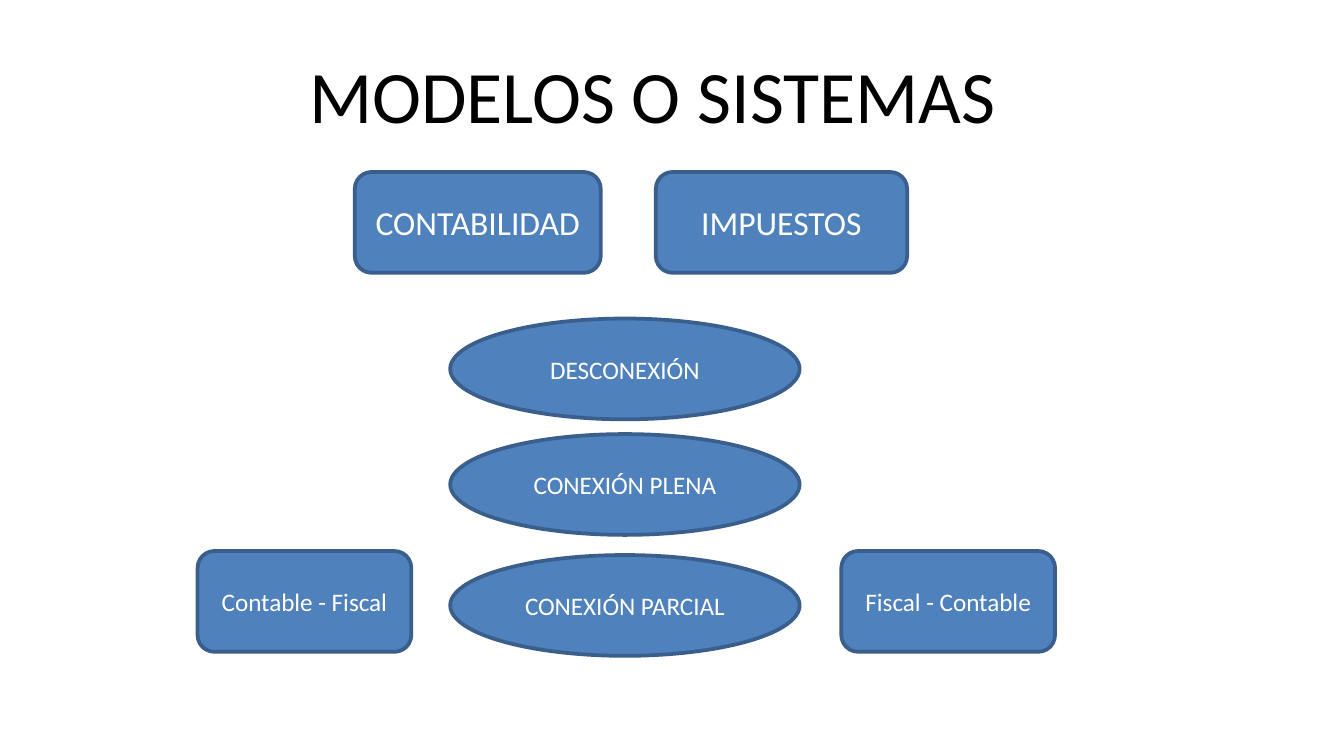
from pptx import Presentation
from pptx.dml.color import RGBColor
from pptx.enum import shapes, text
from pptx.util import Inches, Pt

COLORS = {"title": "000000", "fill": "4F81BD", "line": "3A5F8C", "label": "FFFFFF"}
FONT = "Calibri"
BOX = shapes.MSO_SHAPE.ROUNDED_RECTANGLE
OVAL = shapes.MSO_SHAPE.OVAL
NODE_HEIGHT = 0.75


def color(name):
    return RGBColor.from_string(COLORS[name])


def set_text(sp, label, size, color_name):
    tf = sp.text_frame
    tf.text = label
    tf.word_wrap = True
    tf.vertical_anchor = text.MSO_ANCHOR.MIDDLE
    p = tf.paragraphs[0]
    p.alignment = text.PP_ALIGN.CENTER
    font = p.runs[0].font
    font.name, font.size = FONT, Pt(size)
    font.color.rgb = color(color_name)


def add_title(s, label):
    sp = s.shapes.title
    sp.left, sp.top = Inches(1.64), Inches(0.3)
    sp.width, sp.height = Inches(6.43), Inches(0.8)
    set_text(sp, label, 39.6, "title")


def add_node(s, kind, label, left, top, width, size=13.5):
    sp = s.shapes.add_shape(kind, Inches(left), Inches(top),
                            Inches(width), Inches(NODE_HEIGHT))
    sp.shadow.inherit = False
    sp.fill.solid()
    sp.fill.fore_color.rgb = color("fill")
    sp.line.color.rgb = color("line")
    sp.line.width = Pt(2)
    tf = sp.text_frame
    tf.margin_left = tf.margin_right = Inches(0.05)
    set_text(sp, label, size, "label")


def main():
    # Widescreen 16:9 slide
    prs = Presentation()
    prs.slide_width = Inches(10)
    prs.slide_height = prs.slide_width * 9 // 16
    s = prs.slides.add_slide(prs.slide_layouts[5])
    add_title(s, "MODELOS O SISTEMAS")

    # The two systems
    add_node(s, BOX, "CONTABILIDAD", 2.64, 1.28, 1.83, size=18)
    add_node(s, BOX, "IMPUESTOS", 4.88, 1.28, 1.87, size=18)

    # Degrees of connection
    for label, top in (("DESCONEXIÓN", 2.37), ("CONEXIÓN PLENA", 3.23),
                       ("CONEXIÓN PARCIAL", 4.13)):
        add_node(s, OVAL, label, 3.35, top, 2.6)

    # Variants of the partial connection
    for label, left in (("Contable - Fiscal", 1.47), ("Fiscal - Contable", 6.26)):
        add_node(s, BOX, label, left, 4.1, 1.59)

    prs.save("out.pptx")


if __name__ == "__main__":
    main()
